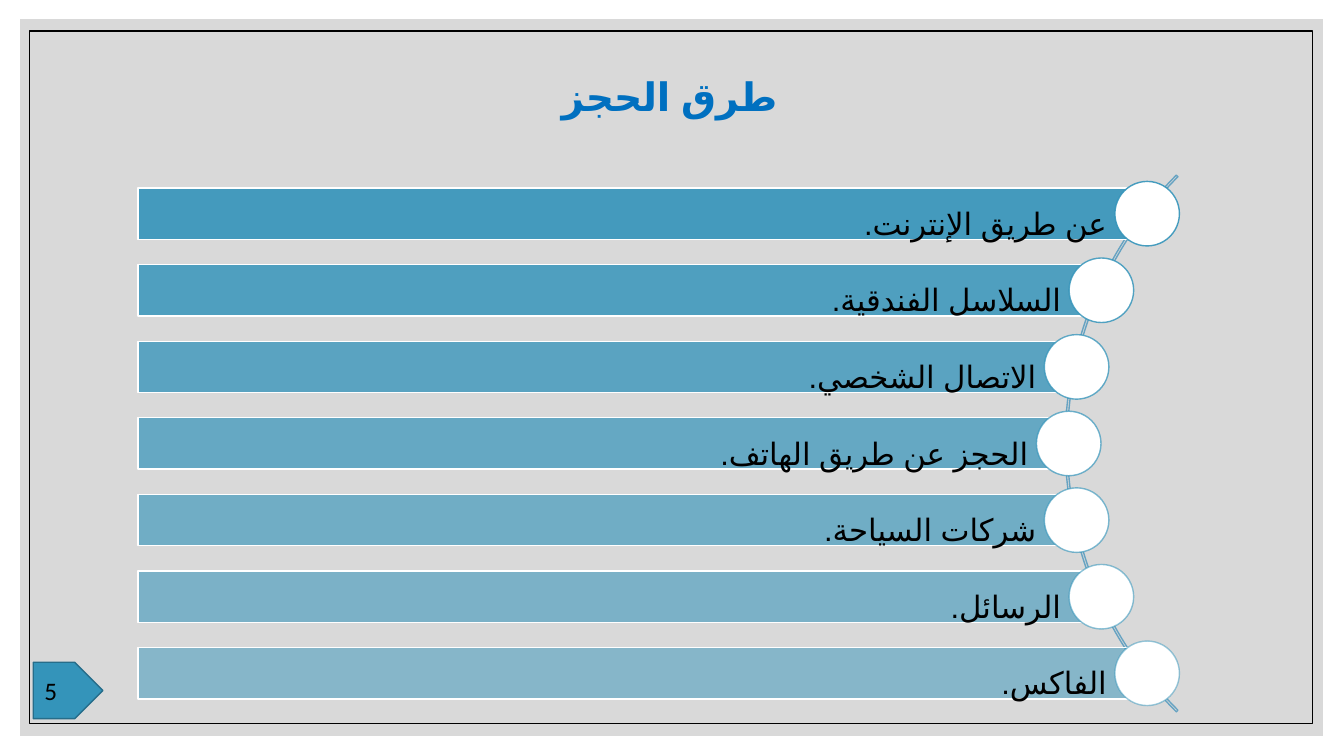
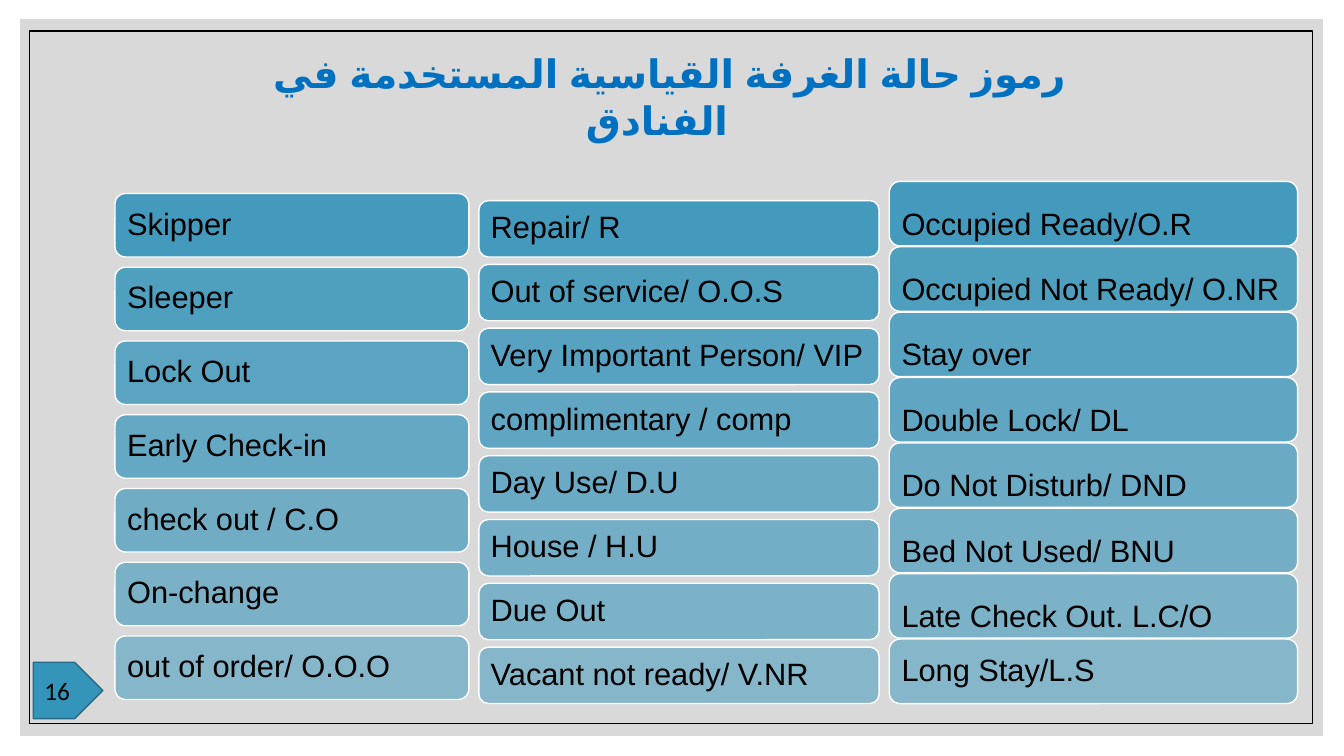
"""Build two hotel booking slides: booking methods and room status codes."""
from math import sqrt

from lxml import etree
from pptx import Presentation
from pptx.dml.color import RGBColor
from pptx.enum.lang import MSO_LANGUAGE_ID
from pptx.enum.shapes import MSO_SHAPE
from pptx.enum.text import MSO_ANCHOR, PP_ALIGN
from pptx.oxml.ns import qn
from pptx.util import Inches, Pt

RECT, ROUND, OVAL = MSO_SHAPE.RECTANGLE, MSO_SHAPE.ROUNDED_RECTANGLE, MSO_SHAPE.OVAL
ARC, PENTAGON = MSO_SHAPE.BLOCK_ARC, MSO_SHAPE.PENTAGON
MIDDLE = MSO_ANCHOR.MIDDLE
LEFT, CENTER, JUSTIFY = PP_ALIGN.LEFT, PP_ALIGN.CENTER, PP_ALIGN.JUSTIFY
ARABIC = MSO_LANGUAGE_ID.ARABIC

COLORS = {
    "panel": "D9D9D9", "accent": "3494BA", "tag_line": "266D8A", "arc": "67A3C2",
    "title": "0070C0", "black": "000000", "white": "FFFFFF",
}
METHODS = [
    "عن طريق الإنترنت.", "السلاسل الفندقية.", "الاتصال الشخصي.", "الحجز عن طريق الهاتف.",
    "شركات السياحة.", "الرسائل.", "الفاكس.",
]
OCCUPIED = [
    "Occupied Ready/O.R", "Occupied Not Ready/ O.NR", "Stay over", "Double Lock/ DL",
    "Do Not Disturb/ DND", "Bed Not Used/ BNU", "Late Check Out. L.C/O", "Long Stay/L.S",
]
SERVICE = [
    "Repair/ R", "Out of service/ O.O.S", "Very Important Person/ VIP", "complimentary / comp",
    "Day Use/ D.U", "House / H.U", "Due Out", "Vacant not ready/ V.NR",
]
DEPARTURE = [
    "Skipper", "Sleeper", "Lock Out", "Early Check-in", "check out / C.O", "On-change",
    "out of order/ O.O.O",
]


def paint(fmt, color, opacity=100):
    """Give a fill a solid colour with an optional opacity in percent."""
    fmt.solid()
    fmt.fore_color.rgb = RGBColor.from_string(COLORS[color])
    if opacity < 100:
        clr = fmt._xPr.find(qn("a:solidFill"))[0]
        etree.SubElement(clr, qn("a:alpha")).set("val", str(round(opacity * 1000)))


def add_box(s, kind, box, fill=None, line=None, fill_opacity=100, line_opacity=100):
    """Add a preset shape without shadow."""
    sp = s.shapes.add_shape(kind, *map(Inches, box))
    sp.shadow.inherit = False
    if fill:
        paint(sp.fill, fill, fill_opacity)
    else:
        sp.fill.background()
    if line:
        sp.line.width = Pt(1)
        paint(sp.line.fill, line, line_opacity)
    else:
        sp.line.fill.background()
    return sp


def set_text(sp, text, size, align, color="black", font="Calibri", bold=False,
             insets=(0.1, 0.05, 0.1, 0.05), spacing=None, rtl=False, wrap=True):
    """Write one vertically centred paragraph and return it."""
    tf = sp.text_frame
    tf.word_wrap, tf.vertical_anchor = wrap, MIDDLE
    tf.margin_left, tf.margin_top, tf.margin_right, tf.margin_bottom = map(Inches, insets)
    p = tf.paragraphs[0]
    p.text, p.alignment = text, align
    if spacing:
        p.line_spacing = spacing
    r = p.runs[0]
    r.font.size, r.font.bold, r.font.name = Pt(size), bold, font
    r.font.color.rgb = RGBColor.from_string(COLORS[color])
    if rtl:
        p._p.get_or_add_pPr().set("rtl", "1")
        r.font.language_id = ARABIC
        etree.SubElement(r._r.get_or_add_rPr(), qn("a:cs")).set("typeface", "Arial")
    return p


def add_base(prs, title, number):
    """Add a slide with its panel, frame, page tag and title."""
    s = prs.slides.add_slide(prs.slide_layouts[6])
    add_box(s, RECT, (0.2, 0.19, 12.92, 7.11), "panel")
    add_box(s, RECT, (0.29, 0.31, 12.73, 6.87), line="black")
    tag = add_box(s, PENTAGON, (0.33, 6.57, 0.69, 0.56), "accent", "tag_line")
    set_text(tag, number, 18, LEFT, insets=(0.11, 0.05, 0, 0.05), wrap=False)
    sp = s.shapes.add_textbox(*map(Inches, (2.19, 0.47, 8.9, 0.97)))
    p = set_text(sp, title, 28, CENTER, "title", bold=True, rtl=True)
    pPr = p._p.get_or_add_pPr()
    pPr.set("marL", str(Inches(0.25)))
    pPr.set("indent", str(Inches(-0.25)))
    return s


def fade(i, count):
    """Return the opacity of row i, falling evenly from 90 to 50."""
    return 90 - 40 * i / (count - 1)


def add_arc_list(s, items):
    """Add right-to-left bars that end in circles lying on an arc."""
    arc_x, arc_y, radius, size = 14.33, 4.4, 3.73, 7.53
    left, height, pitch, dot = 1.37, 0.51, 0.76, 0.64
    arc = add_box(s, ARC, (arc_x - size / 2, arc_y - size / 2, size, size), line="arc")
    for k, value in enumerate((81, 135, 0.003)):
        arc.adjustments[k] = value
    for i, text in enumerate(items):
        dy = (i - (len(items) - 1) / 2) * pitch
        x, y = arc_x - sqrt(radius ** 2 - dy ** 2), arc_y + dy
        opacity = fade(i, len(items))
        bar = add_box(s, RECT, (left, y - height / 2, x - left, height), "accent", "white", opacity)
        set_text(bar, text, 22, JUSTIFY, insets=(0.06, 0.06, 0.4, 0.06), spacing=1.5, rtl=True)
        add_box(s, OVAL, (x - dot / 2, y - dot / 2, dot, dot), "white", "accent",
                line_opacity=opacity)


def add_column(s, items, left, width, height, first, last, loose=0):
    """Stack rounded bars from first to last top; the leading loose ones get wide spacing."""
    pitch = (last - first) / (len(items) - 1)
    for i, text in enumerate(items):
        bar = add_box(s, ROUND, (left, first + i * pitch, width, height), "accent", "white",
                      fade(i, len(items)))
        set_text(bar, text, 22, JUSTIFY, font="Arial", insets=(0.09,) * 4,
                 spacing=1.5 if i < loose else 0.9)


def main():
    """Build and save the slides."""
    prs = Presentation()
    prs.slide_width, prs.slide_height = Inches(13.33), Inches(7.5)
    s = add_base(prs, "طرق الحجز", "5")
    add_arc_list(s, METHODS)
    s = add_base(prs, "رموز حالة الغرفة القياسية المستخدمة في الفنادق", "16")
    add_column(s, OCCUPIED, 8.82, 4.05, 0.64, 1.8, 6.34, loose=7)
    add_column(s, SERVICE, 4.75, 3.97, 0.56, 1.99, 6.42)
    add_column(s, DEPARTURE, 1.14, 3.51, 0.63, 1.92, 6.31)
    prs.save("out.pptx")


if __name__ == "__main__":
    main()
